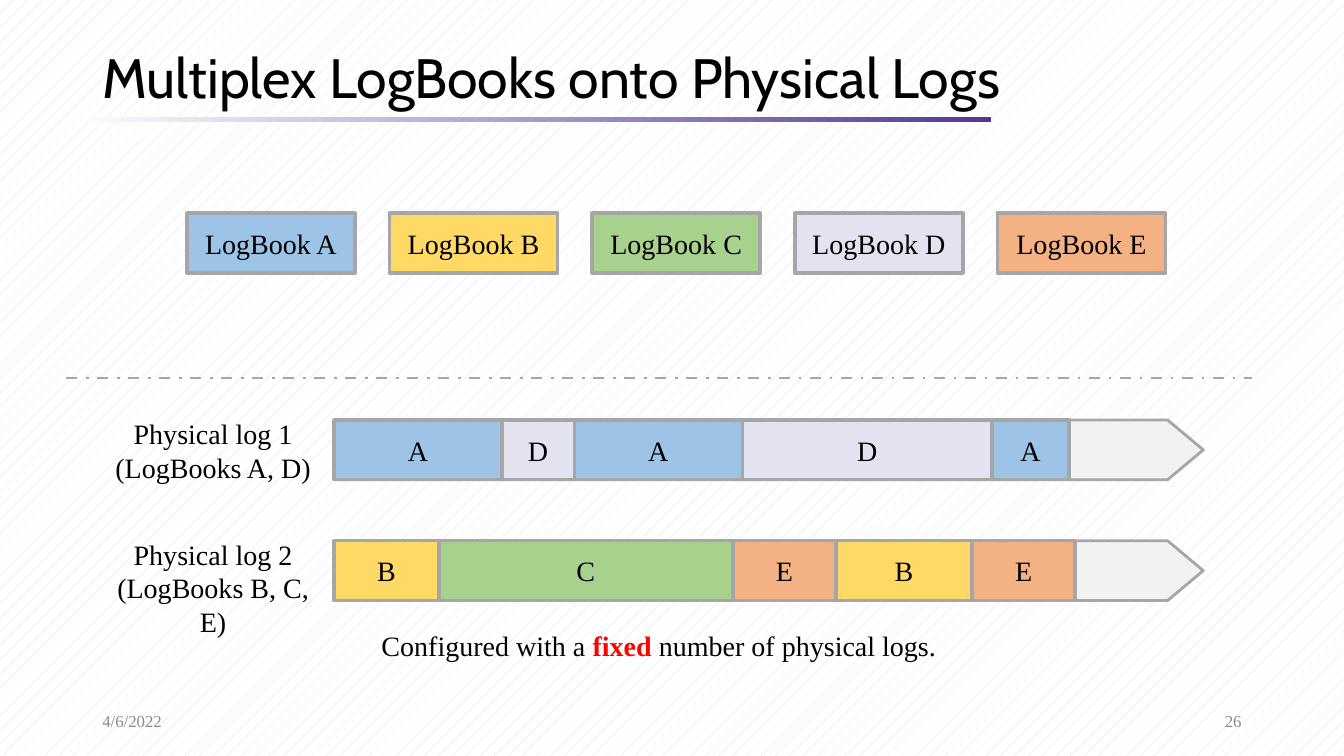
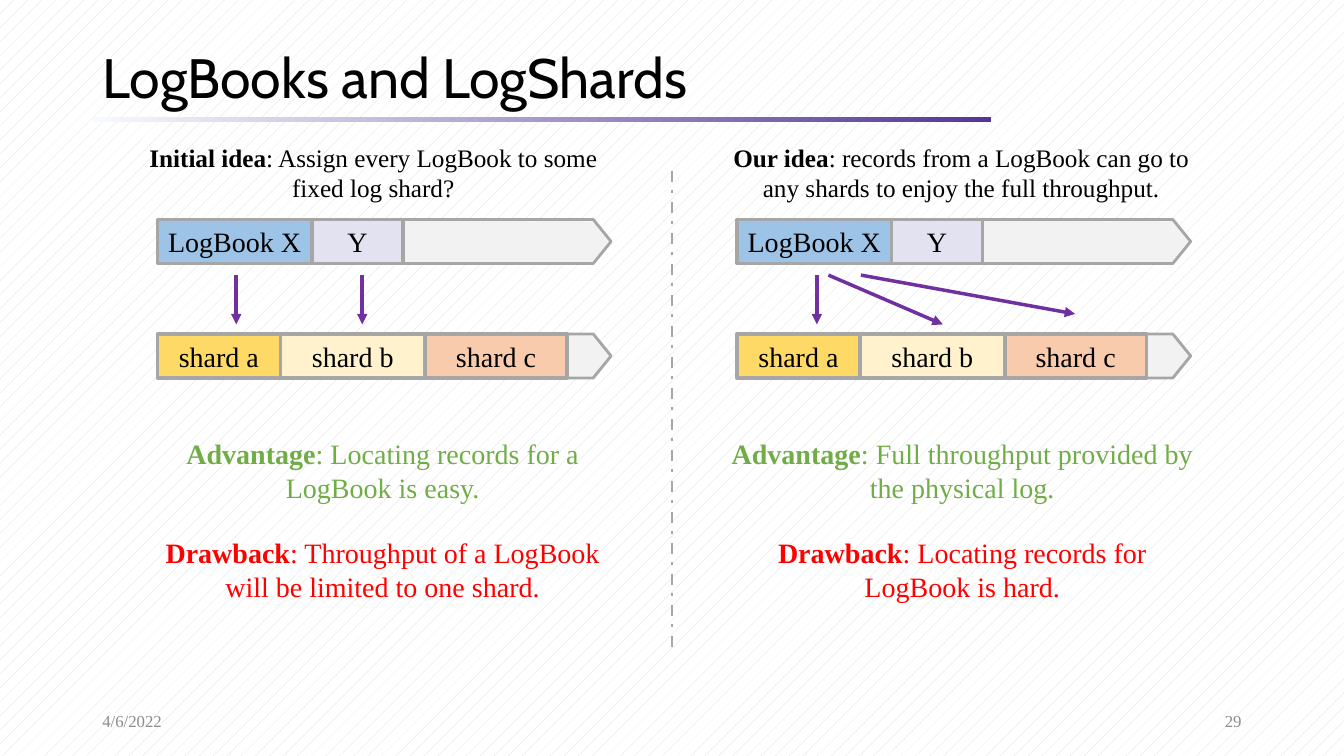
"""Build two slides on LogBooks, physical logs and log shards."""
import lxml.etree
import pptx
import pptx.dml.color
import pptx.enum.dml
import pptx.enum.shapes
import pptx.enum.text
import pptx.oxml.ns
import pptx.util

RGBColor = pptx.dml.color.RGBColor
SHAPE = pptx.enum.shapes.MSO_SHAPE
ALIGN = pptx.enum.text.PP_ALIGN
MIDDLE = pptx.enum.text.MSO_ANCHOR.MIDDLE

BLACK = RGBColor(0x00, 0x00, 0x00)
WHITE = RGBColor(0xFF, 0xFF, 0xFF)
STRIPE = RGBColor(0xD9, 0xD9, 0xD9)
GRAY = RGBColor(0xA6, 0xA6, 0xA6)
FOOTER_GRAY = RGBColor(0x8C, 0x8C, 0x8C)
PALE_GRAY = RGBColor(0xF2, 0xF2, 0xF2)
PALE_BLUE = RGBColor(0xF7, 0xFA, 0xFD)
INDIGO = RGBColor(0x54, 0x37, 0x95)
PURPLE = RGBColor(0x70, 0x30, 0xA0)
BLUE = RGBColor(0x9D, 0xC3, 0xE6)
YELLOW = RGBColor(0xFF, 0xD9, 0x66)
GREEN = RGBColor(0xA9, 0xD1, 0x8E)
LAVENDER = RGBColor(0xE3, 0xE2, 0xF0)
ORANGE = RGBColor(0xF4, 0xB1, 0x83)
CREAM = RGBColor(0xFF, 0xF2, 0xCC)
PEACH = RGBColor(0xF8, 0xCB, 0xAD)
TEXT_GREEN = RGBColor(0x70, 0xAD, 0x47)
RED = RGBColor(0xFF, 0x00, 0x00)

PX = 9525
TITLE_FONT = "Cabin"
BODY_FONT = "Times New Roman"
BOOK_COLORS = {"A": BLUE, "B": YELLOW, "C": GREEN, "D": LAVENDER, "E": ORANGE}


def add_text(page, bounds, paragraphs, size=20, align=ALIGN.CENTER, gap=0):
    box = page.shapes.add_textbox(*[length * PX for length in bounds])
    frame = box.text_frame
    frame.word_wrap = True
    for index, spans in enumerate(paragraphs):
        para = frame.add_paragraph() if index else frame.paragraphs[0]
        para.alignment = align
        if index and gap:
            para.space_before = pptx.util.Pt(gap)
        for text, color, bold in spans:
            span = para.add_run()
            span.text = text
            span.font.name = BODY_FONT
            span.font.size = pptx.util.Pt(size)
            span.font.color.rgb = color
            span.font.bold = bold
    return box


def add_log(page, top, height, edges, segments, tip=None, head=0):
    parts = [(SHAPE.RECTANGLE, left, right, color, label, 2.5)
             for left, right, (label, color) in zip(edges, edges[1:], segments)]
    if tip:
        parts.insert(0, (SHAPE.PENTAGON, edges[0], tip, PALE_GRAY, "", 2))
    for kind, left, right, color, label, weight in parts:
        block = page.shapes.add_shape(
            kind, left * PX, top * PX, (right - left) * PX, height * PX)
        block.shadow.inherit = False
        block.fill.solid()
        block.fill.fore_color.rgb = color
        block.line.color.rgb = GRAY
        block.line.width = pptx.util.Pt(weight)
        if kind == SHAPE.PENTAGON:
            block.adjustments[0] = head / height
            continue
        frame = block.text_frame
        frame.margin_left = frame.margin_right = 0
        frame.margin_top = frame.margin_bottom = 0
        frame.vertical_anchor = MIDDLE
        para = frame.paragraphs[0]
        para.text = label
        para.alignment = ALIGN.CENTER
        para.font.name = BODY_FONT
        para.font.size = pptx.util.Pt(20)
        para.font.color.rgb = BLACK


deck = pptx.Presentation()
deck.slide_width = 1280 * PX
deck.slide_height = 720 * PX
backdrop = deck.slide_master.background.fill
backdrop.patterned()
backdrop.pattern = pptx.enum.dml.MSO_PATTERN.PERCENT_5
backdrop.fore_color.rgb = STRIPE
backdrop.back_color.rgb = WHITE

pages = []
for heading, number in [("Multiplex LogBooks onto Physical Logs", "26"),
                        ("LogBooks and LogShards", "29")]:
    page = deck.slides.add_slide(deck.slide_layouts[5])
    pages.append(page)

    rule = page.shapes.add_shape(SHAPE.RECTANGLE, 88 * PX, 111 * PX, 856 * PX, 5 * PX)
    rule.shadow.inherit = False
    rule.line.fill.background()
    rule.fill.gradient()
    rule.fill.gradient_angle = 0
    for stop, color in zip(rule.fill.gradient_stops, (PALE_BLUE, INDIGO)):
        stop.color.rgb = color

    title = page.shapes.title
    title.left, title.top, title.width, title.height = 88 * PX, 41 * PX, 1104 * PX, 72 * PX
    title.text_frame.text = heading
    title.text_frame.auto_size = pptx.enum.text.MSO_AUTO_SIZE.NONE
    title.text_frame.vertical_anchor = MIDDLE
    para = title.text_frame.paragraphs[0]
    para.alignment = ALIGN.LEFT
    para.line_spacing = 0.9
    para.font.name = TITLE_FONT
    para.font.size = pptx.util.Pt(39.6)
    para.font.color.rgb = BLACK

    for left, text, align in [(88, "4/6/2022", ALIGN.LEFT), (904, number, ALIGN.RIGHT)]:
        footer = add_text(page, (left, 667, 288, 38), [[(text, FOOTER_GRAY, False)]], 12, align)
        footer.text_frame.vertical_anchor = MIDDLE

multiplex, shards = pages

for index, (letter, color) in enumerate(BOOK_COLORS.items()):
    left = 178 + 193 * index
    add_log(multiplex, 203, 57, [left, left + 160], [(f"LogBook {letter}", color)])

for top, name, members, letters, edges in [
    (400, "Physical log 1", "(LogBooks A, D)", "ADADA", [318, 478, 547, 707, 945, 1018]),
    (515, "Physical log 2", "(LogBooks B, C, E)", "BCEBE", [318, 418, 698, 796, 926, 1024]),
]:
    add_text(multiplex, (88, top - 8, 230, 74),
             [[(name, BLACK, False)], [(members, BLACK, False)]])
    segments = [(letter, BOOK_COLORS[letter]) for letter in letters]
    add_log(multiplex, top, 57, edges, segments, tip=1146, head=34)

add_text(multiplex, (263, 594, 729, 42), [[
    ("Configured with a ", BLACK, False),
    ("fixed", RED, True),
    (" number of physical logs.", BLACK, False),
]])

for shift, idea_width, idea, summary, advantage, drawback in [
    (0, 477, "Initial idea", ": Assign every LogBook to some fixed log shard?",
     ": Locating records for a LogBook is easy.",
     ": Throughput of a LogBook will be limited to one shard."),
    (552, 493, "Our idea",
     ": records from a LogBook can go to any shards to enjoy the full throughput.",
     ": Full throughput provided by the physical log.",
     ": Locating records for LogBook is hard."),
]:
    add_text(shards, (117 + shift, 131, idea_width, 68),
             [[(idea, BLACK, True), (summary, BLACK, False)]], 18)
    for top, edges, segments in [
        (209, [150, 297, 384], [("LogBook X", BLUE), ("Y", LAVENDER)]),
        (318, [150, 267, 405, 540],
         [("shard a", YELLOW), ("shard b", CREAM), ("shard c", PEACH)]),
    ]:
        add_log(shards, top, 42, [edge + shift for edge in edges], segments,
                tip=582 + shift, head=17)
    add_text(shards, (129 + shift, 411, 471, 171), [
        [("Advantage", TEXT_GREEN, True), (advantage, TEXT_GREEN, False)],
        [("Drawback", RED, True), (drawback, RED, False)],
    ], gap=23)

for page, ends, is_arrow in [
    (multiplex, (63, 360, 1192, 360), False),
    (shards, (640, 616, 640, 155), False),
    (shards, (225, 262, 225, 309), True),
    (shards, (345, 262, 345, 309), True),
    (shards, (778, 262, 778, 309), True),
    (shards, (789, 262, 898, 309), True),
    (shards, (820, 262, 1024, 299), True),
]:
    connector = page.shapes.add_connector(
        pptx.enum.shapes.MSO_CONNECTOR.STRAIGHT, *[end * PX for end in ends])
    connector.line.color.rgb = PURPLE if is_arrow else GRAY
    connector.line.width = pptx.util.Pt(2.5 if is_arrow else 2)
    properties = connector.element.spPr
    if is_arrow:
        outline = properties.find(pptx.oxml.ns.qn("a:ln"))
        lxml.etree.SubElement(outline, pptx.oxml.ns.qn("a:tailEnd"), type="triangle")
    else:
        connector.line.dash_style = pptx.enum.dml.MSO_LINE.DASH_DOT
    lxml.etree.SubElement(properties, pptx.oxml.ns.qn("a:effectLst"))

deck.save("out.pptx")
